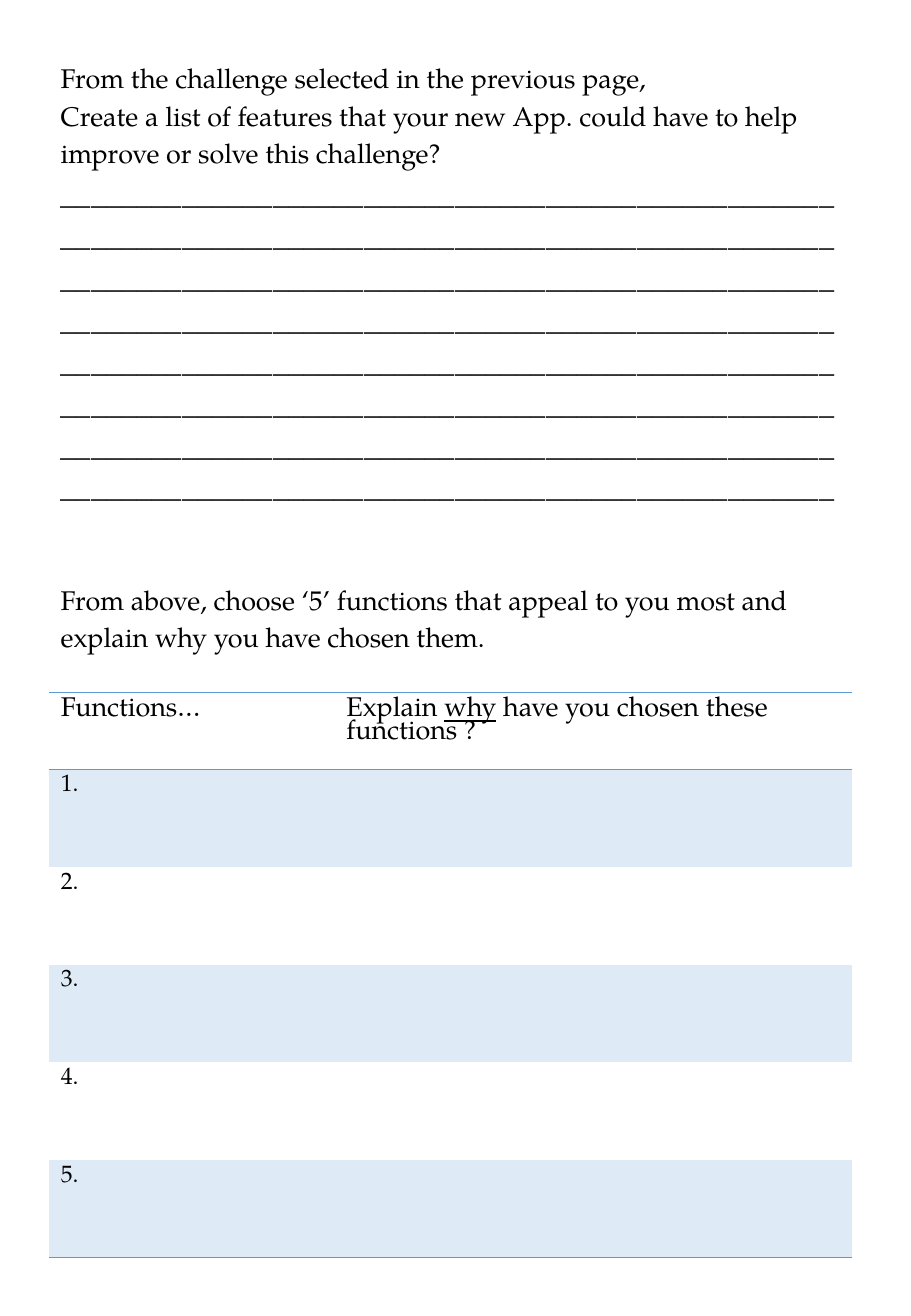
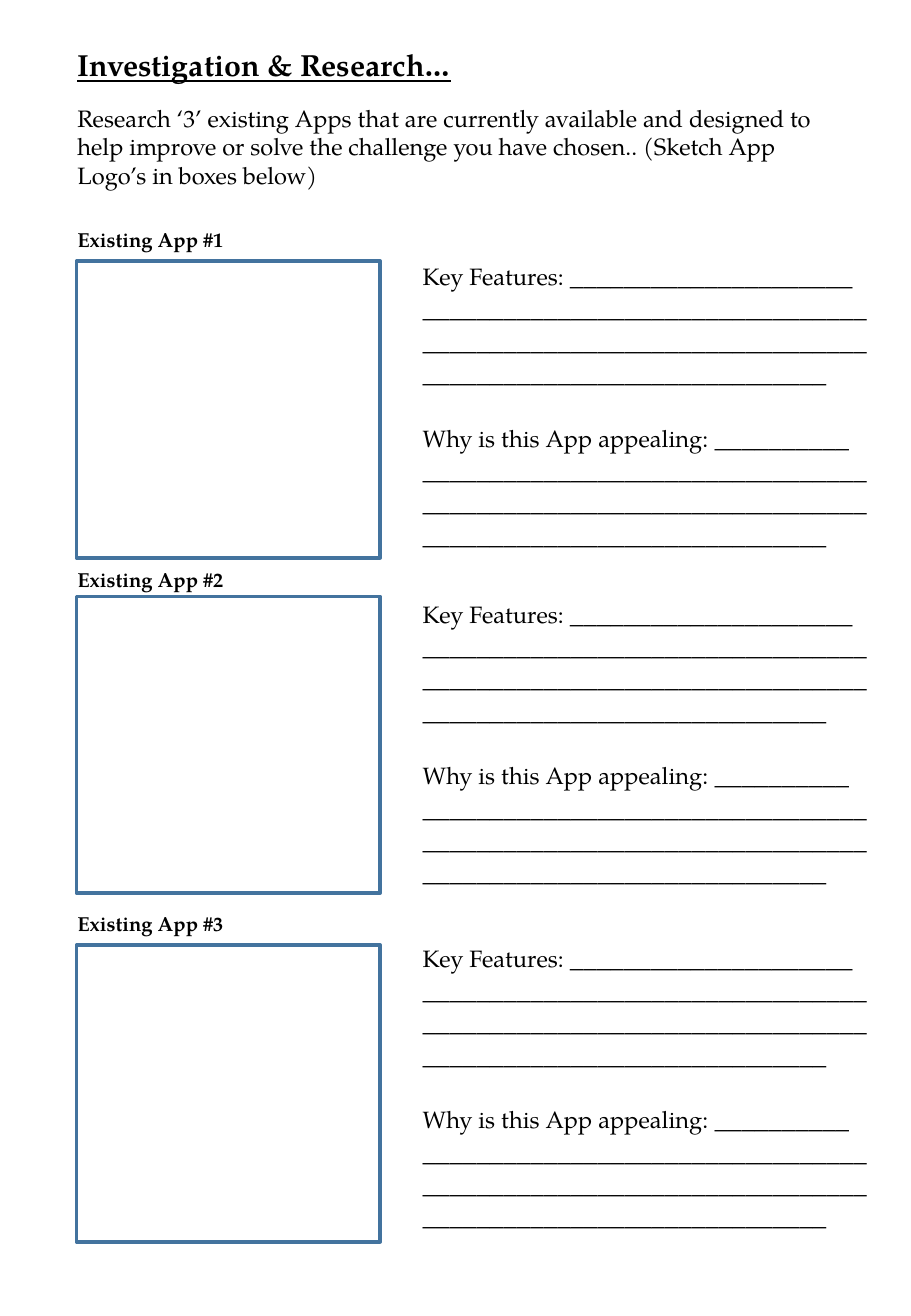
"""Builds a two-page app design worksheet: feature list and research sheet."""
from dataclasses import dataclass

from lxml import etree
from pptx import Presentation
from pptx import util as u
from pptx.dml.color import RGBColor
from pptx.enum import shapes
from pptx.oxml.ns import qn

FONT = "TeX Gyre Pagella"
BLACK, BLUE, BAND, FRAME = "000000", "5B9BD5", "DEEBF7", "43739E"
NO_STYLE = "{2D5ABB26-0587-4C30-8999-92F81FD0307C}"


@dataclass(frozen=True)
class Run:
    text: str
    size: float | None = None
    underline: bool | None = None


@dataclass(frozen=True)
class Para:
    runs: tuple[Run, ...]
    size: float
    bold: bool = False
    underline: bool = False
    before: float = 0
    spacing: float = 1.0


@dataclass(frozen=True)
class AppRow:
    label: str
    label_top: float
    frame_top: float
    question_top: float


APPS = (
    AppRow("Existing App #1", 4.62, 5.46, 5.28),
    AppRow("Existing App #2", 11.73, 12.47, 12.34),
    AppRow("Existing App #3", 18.92, 19.76, 19.53),
)


def rgb(value: str) -> RGBColor:
    return RGBColor.from_string(value)


def rule(count: int) -> str:
    return "_" * count


def write(tf, paras: tuple[Para, ...]) -> None:
    for i, para in enumerate(paras):
        p = tf.paragraphs[0] if i == 0 else tf.add_paragraph()
        p.space_before = u.Pt(para.before)
        p.line_spacing = para.spacing
        p.font.name = FONT
        p.font.size = u.Pt(para.size)
        p.font.bold = para.bold
        p.font.underline = para.underline
        p.font.color.rgb = rgb(BLACK)
        for run in para.runs:
            r = p.add_run()
            r.text = run.text
            if run.size:
                r.font.size = u.Pt(run.size)
            if run.underline:
                r.font.underline = True


def add_text(s, left: float, top: float, width: float, height: float,
             *paras: Para) -> None:
    sp = s.shapes.add_textbox(u.Cm(left), u.Cm(top), u.Cm(width), u.Cm(height))
    sp.text_frame.word_wrap = True
    write(sp.text_frame, paras)


def add_frame(s, left: float, top: float, width: float, height: float) -> None:
    sp = s.shapes.add_shape(shapes.MSO_SHAPE.RECTANGLE, u.Cm(left), u.Cm(top),
                            u.Cm(width), u.Cm(height))
    sp.shadow.inherit = False
    sp.fill.background()
    sp.line.color.rgb = rgb(FRAME)
    sp.line.width = u.Pt(2.25)


def set_borders(cell, *sides: str) -> None:
    tc_pr = cell._tc.get_or_add_tcPr()
    for i, side in enumerate(sides):
        ln = etree.Element(qn(f"a:{side}"), w=str(u.Pt(1)))
        fill = etree.SubElement(ln, qn("a:solidFill"))
        etree.SubElement(fill, qn("a:srgbClr"), val=BLUE)
        tc_pr.insert(i, ln)


def add_functions_table(s) -> None:
    widths, heights = (5.97, 10.82), (1.61,) + (2.04,) * 5
    frame = s.shapes.add_table(len(heights), len(widths), u.Cm(1.02), u.Cm(14.48),
                               u.Cm(sum(widths)), u.Cm(sum(heights)))
    for style in frame.element.iter(qn("a:tableStyleId")):
        style.text = NO_STYLE
    table = frame.table
    table.first_row = table.horz_banding = False
    for column, width in zip(table.columns, widths):
        column.width = u.Cm(width)
    for i, height in enumerate(heights):
        table.rows[i].height = u.Cm(height)
        for cell in table.rows[i].cells:
            if i % 2:
                cell.fill.solid()
                cell.fill.fore_color.rgb = rgb(BAND)
            else:
                cell.fill.background()
            if i == 0:
                set_borders(cell, "lnT", "lnB")
            elif i == len(heights) - 1:
                set_borders(cell, "lnB")
        if i:
            number = Para((Run(f"{i}."),), 14, spacing=0.83)
            write(table.cell(i, 0).text_frame, (number,))
    headings = (
        (Run("Functions…"),),
        (Run("Explain "), Run("why", underline=True),
         Run(" have you chosen these functions ?")),
    )
    for j, runs in enumerate(headings):
        write(table.cell(0, j).text_frame, (Para(runs, 16, spacing=0.83),))


def features_slide(s) -> None:
    add_text(
        s, 1.02, 1.07, 16.76, 25.2,
        Para((Run("From the challenge selected in the previous page,"),), 16,
             spacing=1.15),
        Para((Run("Create a list of features that your new App. could have to "
                  "help improve or solve this challenge? "),
              Run(rule(51 * 8), 18)), 16, spacing=1.15),
        Para((Run("From above, choose ‘5’ functions that appeal to you most and "
                  "explain why you have chosen them."),), 16, before=44,
             spacing=1.15),
    )
    add_functions_table(s)


def question(prompt: str, first: int, before: float = 0) -> Para:
    lines = f"{rule(first)} {rule(33 * 2 + 30)}"
    return Para((Run(prompt, 14), Run(lines)), 16, before=before)


def research_slide(s) -> None:
    add_text(
        s, 1.37, 0.84, 16.28, 3.28,
        Para((Run("Investigation & Research…"),), 18, bold=True, underline=True),
        Para((Run("Research ‘3’ existing Apps that are currently available and "
                  "designed to help improve or solve the challenge you have "
                  "chosen.. (Sketch App Logo’s in boxes below)"),), 14,
             before=12.5),
    )
    for app in APPS:
        add_frame(s, 1.6, app.frame_top, 6.35, 6.2)
        add_text(s, 1.37, app.label_top, 4.11, 0.74,
                 Para((Run(app.label),), 12, bold=True))
        add_text(s, 8.59, app.question_top, 9.85, 6.4,
                 question("Key Features: ", 21),
                 question("Why is this App appealing: ", 10, before=19))


def main() -> None:
    prs = Presentation()
    prs.slide_width, prs.slide_height = u.Cm(19.05), u.Cm(27.51)
    for build in (features_slide, research_slide):
        build(prs.slides.add_slide(prs.slide_layouts[6]))
    prs.save("out.pptx")


if __name__ == "__main__":
    main()
